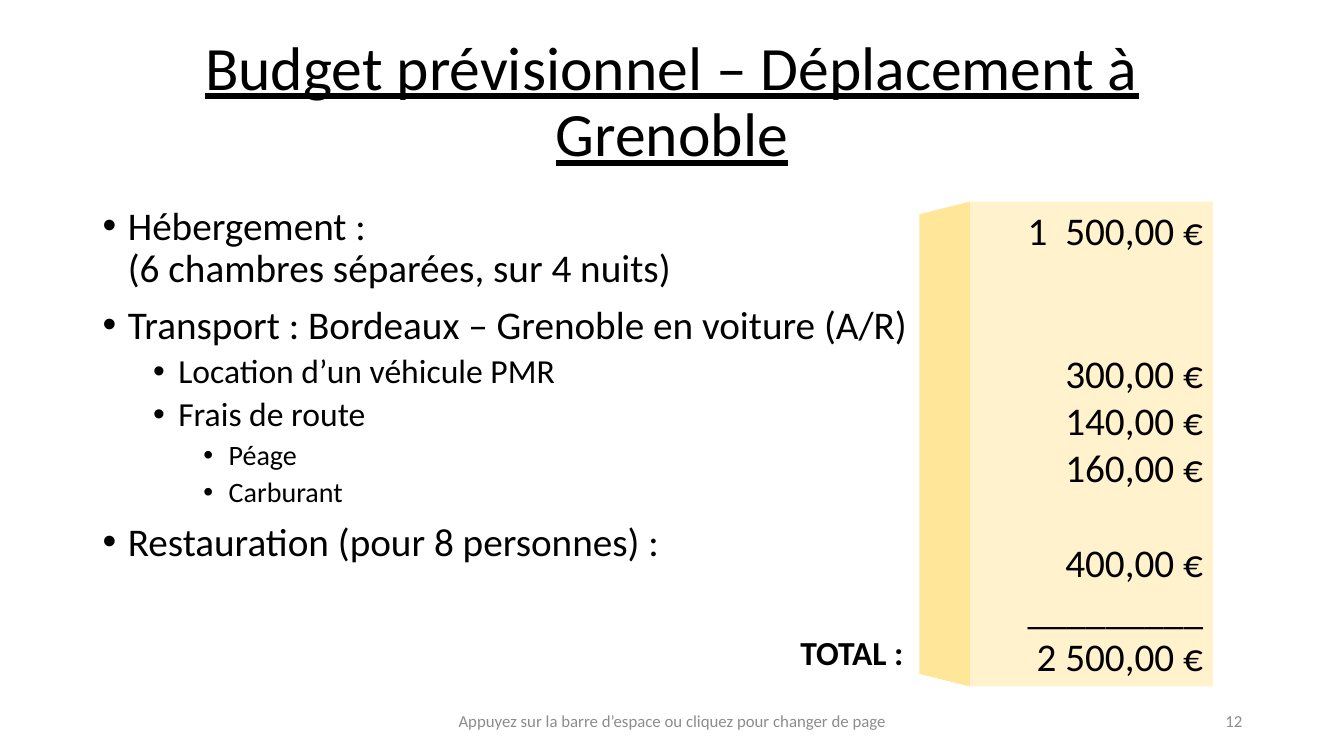
from lxml import etree
from pptx import Presentation
from pptx.dml.color import RGBColor
from pptx.enum.shapes import MSO_SHAPE
from pptx.enum.text import MSO_ANCHOR, PP_ALIGN
from pptx.oxml.ns import qn
from pptx.util import Inches, Pt

RECT, TRAPEZOID = MSO_SHAPE.RECTANGLE, MSO_SHAPE.TRAPEZOID
TOP, MIDDLE = MSO_ANCHOR.TOP, MSO_ANCHOR.MIDDLE
LEFT, CENTER, RIGHT = PP_ALIGN.LEFT, PP_ALIGN.CENTER, PP_ALIGN.RIGHT

# Content
TITLE = "Budget prévisionnel – Déplacement à Grenoble"
ITEMS = [  # level, lines
    (0, ["Hébergement :", "(6 chambres séparées, sur 4 nuits)"]),
    (0, ["Transport : Bordeaux – Grenoble en voiture (A/R)"]),
    (1, ["Location d’un véhicule PMR"]),
    (1, ["Frais de route"]),
    (2, ["Péage"]),
    (2, ["Carburant"]),
    (0, ["Restauration (pour 8 personnes) :"]),
]
PRICES = [  # lines left free above, amount
    (0, "1  500,00 €"),
    (2, "300,00 €"),
    (0, "140,00 €"),
    (0, "160,00 €"),
    (1, "400,00 €"),
    (0, "_________"),
    (0, "2 500,00 €"),
]
TOTAL = "TOTAL :"
FOOTER = "Appuyez sur la barre d’espace ou cliquez pour changer de page"
NUMBER = "12"

THEME = {
    "font": "Calibri",
    "ink": "000000", "muted": "8C8C8C", "panel": "FFF2CC", "side": "FFE699",
    "title": 44, "levels": (28, 24, 20), "price": 28, "total": 24, "footer": 12,
}

# Layout in inches
PANEL = (9.62, 2, 2.41, 4.81)
DEPTH = 0.5
INDENT, STEP = 0.25, 0.5
LINE = 1.22  # line height per point of Calibri

deck = Presentation()
deck.slide_width, deck.slide_height = Inches(13.33), Inches(7.5)
slide = deck.slides.add_slide(deck.slide_layouts[6])


def add_run(para, text, size, color="ink", bold=False, line=False):
    run = para.add_run()
    run.text = text
    font = run.font
    font.name, font.size = THEME["font"], Pt(size)
    font.bold, font.underline = bold, line
    font.color.rgb = RGBColor.from_string(THEME[color])


def add_box(box, anchor=TOP):
    frame = slide.shapes.add_textbox(*map(Inches, box)).text_frame
    frame.word_wrap = True
    frame.vertical_anchor = anchor
    return frame


def add_label(box, text, size, align, anchor=MIDDLE, **style):
    para = add_box(box, anchor).paragraphs[0]
    para.alignment = align
    add_run(para, text, size, **style)
    return para


def add_block(kind, box, fill):
    shape = slide.shapes.add_shape(kind, *map(Inches, box))
    shape.shadow.inherit = False
    shape.fill.solid()
    shape.fill.fore_color.rgb = RGBColor.from_string(THEME[fill])
    shape.line.fill.background()
    return shape


def next_para(frame, index):
    return frame.add_paragraph() if index else frame.paragraphs[0]


def add_bullet(para, level):
    props = para._p.get_or_add_pPr()
    props.set("marL", str(Inches(INDENT + STEP * level)))
    props.set("indent", str(-Inches(INDENT)))
    etree.SubElement(props, qn("a:buFont")).set("typeface", "Arial")
    etree.SubElement(props, qn("a:buChar")).set("char", "•")


# Title
head = add_label((0.74, 0.3, 11.85, 1.45), TITLE, THEME["title"], CENTER, line=True)
head.line_spacing = 0.9

# Expense list
body = add_box((0.92, 2, 11.5, 4.76))
for index, (level, lines) in enumerate(ITEMS):
    para = next_para(body, index)
    para.level = level
    para.line_spacing = 0.9
    para.space_before = Pt(5 if level else 10)
    add_bullet(para, level)
    for row, text in enumerate(lines):
        if row:
            para.add_line_break()
        add_run(para, text, THEME["levels"][level])

# Price panel
panel = add_block(RECT, PANEL, "panel").text_frame
panel.word_wrap = True
panel.vertical_anchor = TOP
for index, (free, text) in enumerate(PRICES):
    para = next_para(panel, index)
    para.alignment = RIGHT
    para.space_before = Pt(round(free * LINE * THEME["price"], 1))
    add_run(para, text, THEME["price"])

# Side face, turned to stand along the panel's left edge
left, top, _, tall = PANEL
side = add_block(
    TRAPEZOID,
    (left - (DEPTH + tall) / 2, top + (tall - DEPTH) / 2, tall, DEPTH),
    "side",
)
side.rotation = 270

# Total label and footer
add_label((7.84, 6.22, 1.7, 0.5), TOTAL, THEME["total"], LEFT, TOP, bold=True)
add_label((9.42, 6.95, 3, 0.4), NUMBER, THEME["footer"], RIGHT, color="muted")
add_label((4.42, 6.95, 4.5, 0.4), FOOTER, THEME["footer"], CENTER, color="muted")

deck.save("out.pptx")
